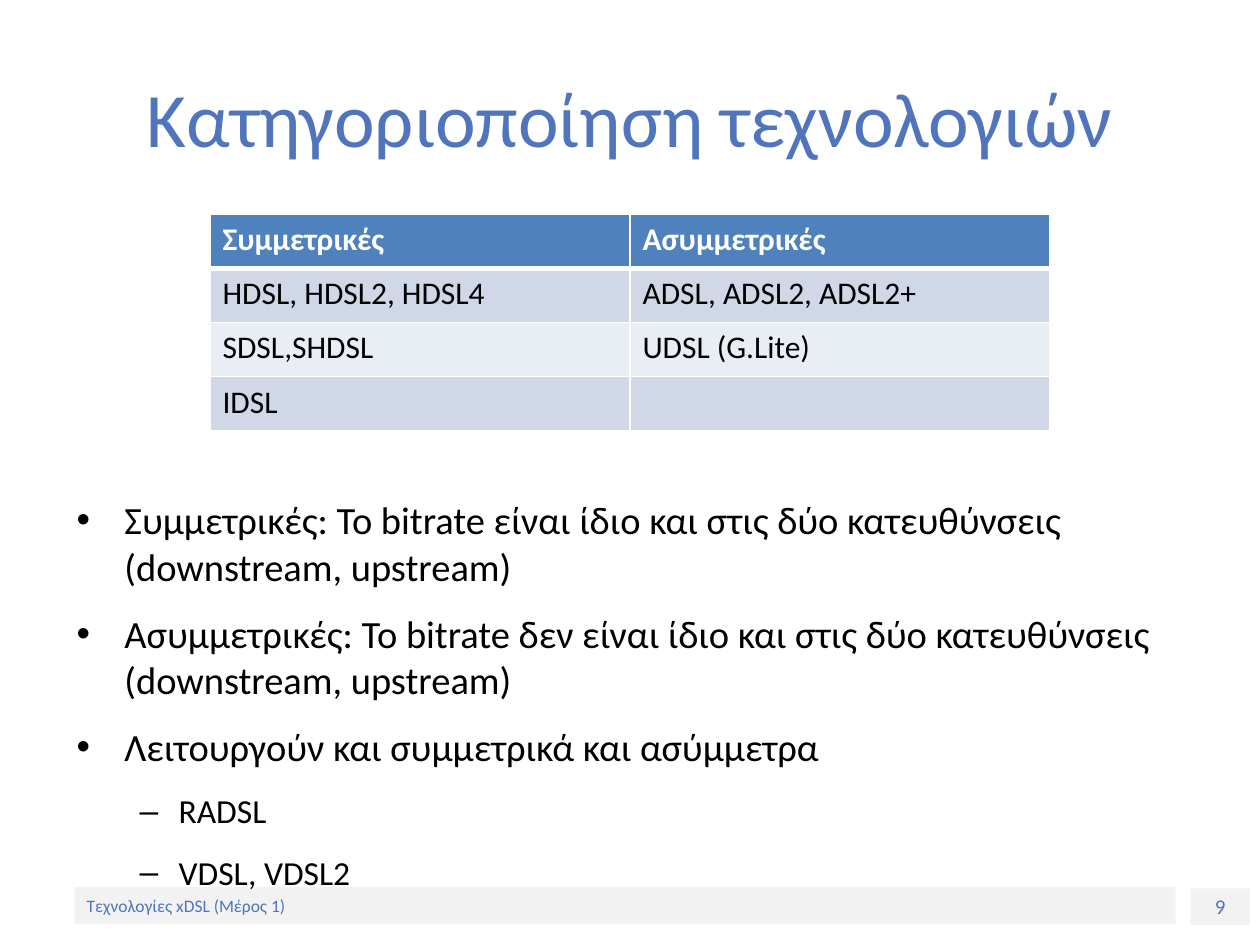
import pptx
import pptx.util
import pptx.dml.color
import pptx.enum.shapes
import pptx.enum.text
import pptx.oxml
import pptx.oxml.ns
from lxml import etree

Inches, Pt = pptx.util.Inches, pptx.util.Pt
RGBColor = pptx.dml.color.RGBColor
ALIGN, ANCHOR = pptx.enum.text.PP_ALIGN, pptx.enum.text.MSO_ANCHOR
qn = pptx.oxml.ns.qn

# Content
TITLE = "Κατηγοριοποίηση τεχνολογιών"
TECHNOLOGIES = [
    ("Συμμετρικές", "Ασυμμετρικές"),
    ("HDSL, HDSL2, HDSL4", "ADSL, ADSL2, ADSL2+"),
    ("SDSL,SHDSL", "UDSL (G.Lite)"),
    ("IDSL", ""),
]
POINTS = [
    (0, "Συμμετρικές: Το bitrate είναι ίδιο και στις δύο κατευθύνσεις (downstream, upstream)"),
    (0, "Ασυμμετρικές: Το bitrate δεν είναι ίδιο και στις δύο κατευθύνσεις (downstream, upstream)"),
    (0, "Λειτουργούν και συμμετρικά και ασύμμετρα"),
    (1, "RADSL"),
    (1, "VDSL, VDSL2"),
]
FOOTER = "Τεχνολογίες xDSL (Μέρος 1)"
PAGE = "9"

# Style
FONT = "Calibri"
BLUE = RGBColor(0x50, 0x75, 0xBC)
HEADER = RGBColor(0x4F, 0x81, 0xBD)
BANDS = [RGBColor(0xE9, 0xED, 0xF4), RGBColor(0xD0, 0xD8, 0xE8)]
GREY = RGBColor(0xF2, 0xF2, 0xF2)
BLACK = RGBColor(0, 0, 0)
WHITE = RGBColor(255, 255, 255)
# Per level: bullet, size, left margin, hanging indent
LEVELS = [("•", 22, 0.38, 0.38), ("–", 19.2, 0.81, 0.31)]

# Geometry in inches
WIDTH, HEIGHT = 10, 7.5
TABLE_WIDTH, TABLE_TOP, ROW_HEIGHT = WIDTH * 2 / 3, 1.7, 0.43


def style(paragraph, size, color, bold=False, align=ALIGN.LEFT):
    paragraph.alignment = align
    font = paragraph.font
    font.name, font.size, font.bold = FONT, Pt(size), bold
    font.color.rgb = color
    for run in paragraph.runs:
        run.font.name, run.font.size, run.font.bold = FONT, Pt(size), bold
        run.font.color.rgb = color


def add_text_box(slide, *box):
    frame = slide.shapes.add_textbox(*map(Inches, box)).text_frame
    frame.word_wrap = True
    return frame


def add_bar(slide, box, text, size, align):
    bar = slide.shapes.add_shape(pptx.enum.shapes.MSO_SHAPE.RECTANGLE, *map(Inches, box))
    bar.shadow.inherit = False
    bar.fill.solid()
    bar.fill.fore_color.rgb = GREY
    bar.line.fill.background()
    bar.text_frame.text = text
    bar.text_frame.vertical_anchor = ANCHOR.MIDDLE
    style(bar.text_frame.paragraphs[0], size, BLUE, align=align)


def set_borders(cell, bottom):
    properties = cell._tc.get_or_add_tcPr()
    sides = {"a:lnL": 1, "a:lnR": 1, "a:lnT": 1, "a:lnB": bottom}
    for position, (side, points) in enumerate(sides.items()):
        line = etree.Element(qn(side), w=str(Pt(points)))
        fill = etree.SubElement(line, qn("a:solidFill"))
        etree.SubElement(fill, qn("a:srgbClr"), val=str(WHITE))
        properties.insert(position, line)


def add_technologies(slide):
    rows, columns = len(TECHNOLOGIES), len(TECHNOLOGIES[0])
    box = ((WIDTH - TABLE_WIDTH) / 2, TABLE_TOP, TABLE_WIDTH, rows * ROW_HEIGHT)
    table = slide.shapes.add_table(rows, columns, *map(Inches, box)).table
    for r, names in enumerate(TECHNOLOGIES):
        is_header = r == 0
        for c, name in enumerate(names):
            cell = table.cell(r, c)
            cell.text_frame.text = name
            style(cell.text_frame.paragraphs[0], 18, WHITE if is_header else BLACK, is_header)
            cell.fill.solid()
            cell.fill.fore_color.rgb = HEADER if is_header else BANDS[r % 2]
            set_borders(cell, 3 if r < 2 and is_header else 1)


def add_points(slide):
    frame = add_text_box(slide, 0.51, 3.89, 9, 3.25)
    for i, (level, text) in enumerate(POINTS):
        bullet, size, margin, hanging = LEVELS[level]
        paragraph = frame.paragraphs[0] if i == 0 else frame.add_paragraph()
        paragraph.text = text
        paragraph.level = level
        paragraph.space_before = Pt(12 if i else 0)
        properties = paragraph._p.get_or_add_pPr()
        properties.set("marL", str(Inches(margin)))
        properties.set("indent", str(-Inches(hanging)))
        etree.SubElement(properties, qn("a:buFont"), typeface="Arial")
        etree.SubElement(properties, qn("a:buChar"), char=bullet)
        style(paragraph, size, BLACK)


def main():
    deck = pptx.Presentation()
    deck.slide_width, deck.slide_height = Inches(WIDTH), Inches(HEIGHT)
    slide = deck.slides.add_slide(deck.slide_layouts[6])

    # Footer bars, behind the text
    add_bar(slide, (9.45, 7.05, 0.47, 0.29), PAGE, 12, ALIGN.CENTER)
    add_bar(slide, (0.59, 7.04, 8.74, 0.29), FOOTER, 10, ALIGN.LEFT)

    # Title
    title = add_text_box(slide, 0.5, 0.3, 9, 1.25)
    title.text = TITLE
    title.vertical_anchor = ANCHOR.MIDDLE
    style(title.paragraphs[0], 44, BLUE, align=ALIGN.CENTER)

    # Explanations and table
    add_points(slide)
    add_technologies(slide)
    deck.save("out.pptx")


if __name__ == "__main__":
    main()
